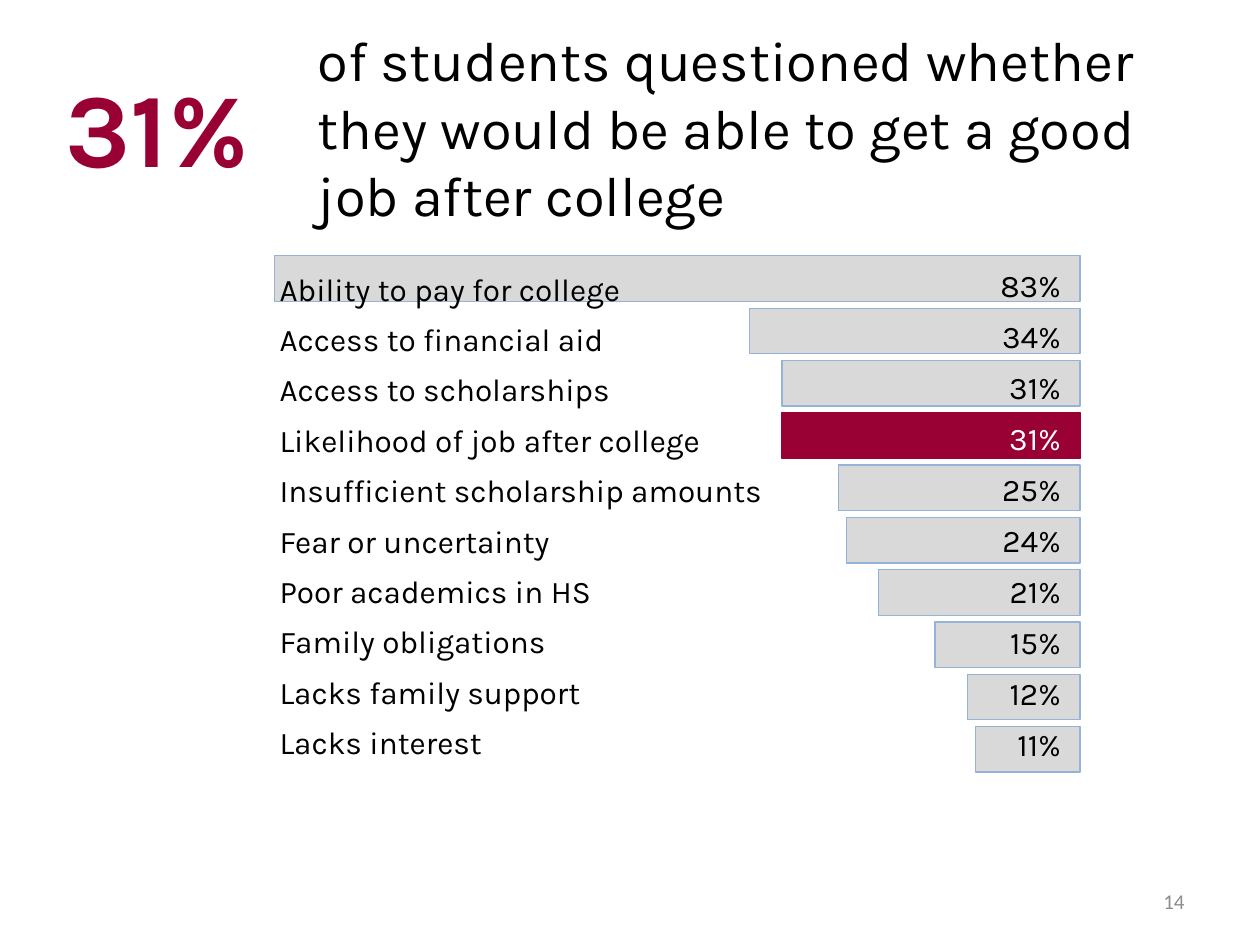
import pptx
import pptx.util
import pptx.chart.data
import pptx.dml.color
import pptx.enum.chart
import pptx.enum.text
from lxml import etree

Inches = pptx.util.Inches
Pt = pptx.util.Pt
RGBColor = pptx.dml.color.RGBColor
ALIGN = pptx.enum.text.PP_ALIGN
ANCHOR = pptx.enum.text.MSO_ANCHOR

BLACK = RGBColor(0x00, 0x00, 0x00)
WHITE = RGBColor(0xFF, 0xFF, 0xFF)
CRIMSON = RGBColor(0x99, 0x00, 0x33)
BAR_GREY = RGBColor(0xD9, 0xD9, 0xD9)
BAR_EDGE = RGBColor(0x95, 0xB3, 0xD7)
NUMBER_GREY = RGBColor(0x8C, 0x8C, 0x8C)

CONCERNS = [
    ("Ability to pay for college", "83%"),
    ("Access to financial aid", "34%"),
    ("Access to scholarships", "31%"),
    ("Likelihood of job after college", "31%"),
    ("Insufficient scholarship amounts", "25%"),
    ("Fear or uncertainty", "24%"),
    ("Poor academics in HS", "21%"),
    ("Family obligations", "15%"),
    ("Lacks family support", "12%"),
    ("Lacks interest", "11%"),
]
BAR_LENGTHS = [0, 0, -13, -14, -18, -25, -29, -30, -37, -37, -41, -100]
HIGHLIGHT_ROW = 3
LABEL_TOP, LABEL_PITCH = 2.09, 0.4
SHARE_TOP, SHARE_PITCH = 2.06, 0.405
ROW_HEIGHT = 0.4
PLOT_SHARES = {"x": 0.094, "y": 0.02, "w": 0.887, "h": 0.96}


def apply_format(target, values):
    """Set each named attribute of the target."""
    for name, value in values.items():
        setattr(target, name, value)


def write(holder, wording, size, colour=BLACK, face="Karla", bold=False,
          align=ALIGN.LEFT, anchor=ANCHOR.TOP):
    """Fill a text holder with one formatted paragraph."""
    frame = holder.text_frame
    apply_format(frame, {"word_wrap": True, "vertical_anchor": anchor,
                         "auto_size": pptx.enum.text.MSO_AUTO_SIZE.NONE})
    line = frame.paragraphs[0]
    line.alignment = align
    run = line.add_run()
    run.text = wording
    apply_format(run.font, {"size": Pt(size), "name": face, "bold": bold})
    run.font.color.rgb = colour


def add_text(slide, box, wording, size, **style):
    """Add a text box at the given inches."""
    write(slide.shapes.add_textbox(*map(Inches, box)), wording, size, **style)


def add_headline(slide):
    """Place the title beside the key figure."""
    headline = slide.shapes.title
    apply_format(headline, {"left": Inches(2.42), "top": Inches(0.17),
                            "width": Inches(7), "height": Inches(1.67)})
    write(headline, "of students questioned whether they would be able "
          "to get a good job after college", 32, anchor=ANCHOR.MIDDLE)


def fix_plot_area(chart):
    """Pin the inner plot area to shares of the chart frame."""
    plot_area = chart.plots[0]._element.getparent()
    space = etree.QName(plot_area).namespace
    for old in plot_area.findall(f"{{{space}}}layout"):
        plot_area.remove(old)
    layout = etree.Element(f"{{{space}}}layout")
    manual = etree.SubElement(layout, f"{{{space}}}manualLayout")
    settings = [("layoutTarget", "inner"), ("xMode", "edge"), ("yMode", "edge")]
    for tag, value in settings + list(PLOT_SHARES.items()):
        etree.SubElement(manual, f"{{{space}}}{tag}").set("val", str(value))
    plot_area.insert(0, layout)


def add_concern_chart(slide):
    """Add bars that grow leftwards from a shared right edge."""
    concern_data = pptx.chart.data.CategoryChartData(number_format="General")
    concern_data.categories = [str(n + 1) for n in range(len(BAR_LENGTHS))]
    concern_data.add_series("Series 1", BAR_LENGTHS)
    chart = slide.shapes.add_chart(
        pptx.enum.chart.XL_CHART_TYPE.BAR_CLUSTERED,
        *map(Inches, (1.5, 1.9, 7.21, 5.19)), concern_data).chart
    apply_format(chart, {"has_legend": False, "has_title": False})
    apply_format(chart.font, {"size": Pt(10), "name": "Calibri"})
    chart.font.color.rgb = BLACK
    apply_format(chart.category_axis, {"visible": False})
    apply_format(chart.value_axis, {
        "visible": False, "has_major_gridlines": False,
        "minimum_scale": -100, "maximum_scale": 0})
    bars = chart.plots[0]
    apply_format(bars, {"gap_width": 15, "overlap": 100,
                        "vary_by_categories": False})
    concern_series = bars.series[0]
    concern_series.invert_if_negative = False
    highlight = concern_series.points[len(BAR_LENGTHS) - 1 - HIGHLIGHT_ROW]
    for part, fill, edge in ((concern_series, BAR_GREY, BAR_EDGE),
                             (highlight, CRIMSON, CRIMSON)):
        part.format.fill.solid()
        part.format.fill.fore_color.rgb = fill
        part.format.line.color.rgb = edge
        part.format.line.width = Pt(0.75)
    fix_plot_area(chart)


def add_concern_rows(slide):
    """Write each concern and its share over the bars."""
    for row, (concern, share) in enumerate(CONCERNS):
        add_text(slide, (2.12, LABEL_TOP + row * LABEL_PITCH, 4.08, ROW_HEIGHT),
                 concern, 18)
        add_text(slide, (7.77, SHARE_TOP + row * SHARE_PITCH, 0.75, ROW_HEIGHT),
                 share, 18, align=ALIGN.RIGHT,
                 colour=WHITE if row == HIGHLIGHT_ROW else BLACK)


def main():
    """Build and save the slide."""
    deck = pptx.Presentation()
    apply_format(deck, {"slide_width": Inches(10), "slide_height": Inches(7.5)})
    slide = deck.slides.add_slide(deck.slide_layouts[5])
    add_headline(slide)
    add_text(slide, (7.17, 6.95, 2.33, 0.4), "14", 12, colour=NUMBER_GREY,
             face="Calibri", align=ALIGN.RIGHT, anchor=ANCHOR.MIDDLE)
    add_concern_chart(slide)
    add_concern_rows(slide)
    add_text(slide, (0.42, 0.25, 1.92, 1.5), "31%", 60, colour=CRIMSON,
             bold=True, anchor=ANCHOR.MIDDLE)
    deck.save("out.pptx")


if __name__ == "__main__":
    main()
